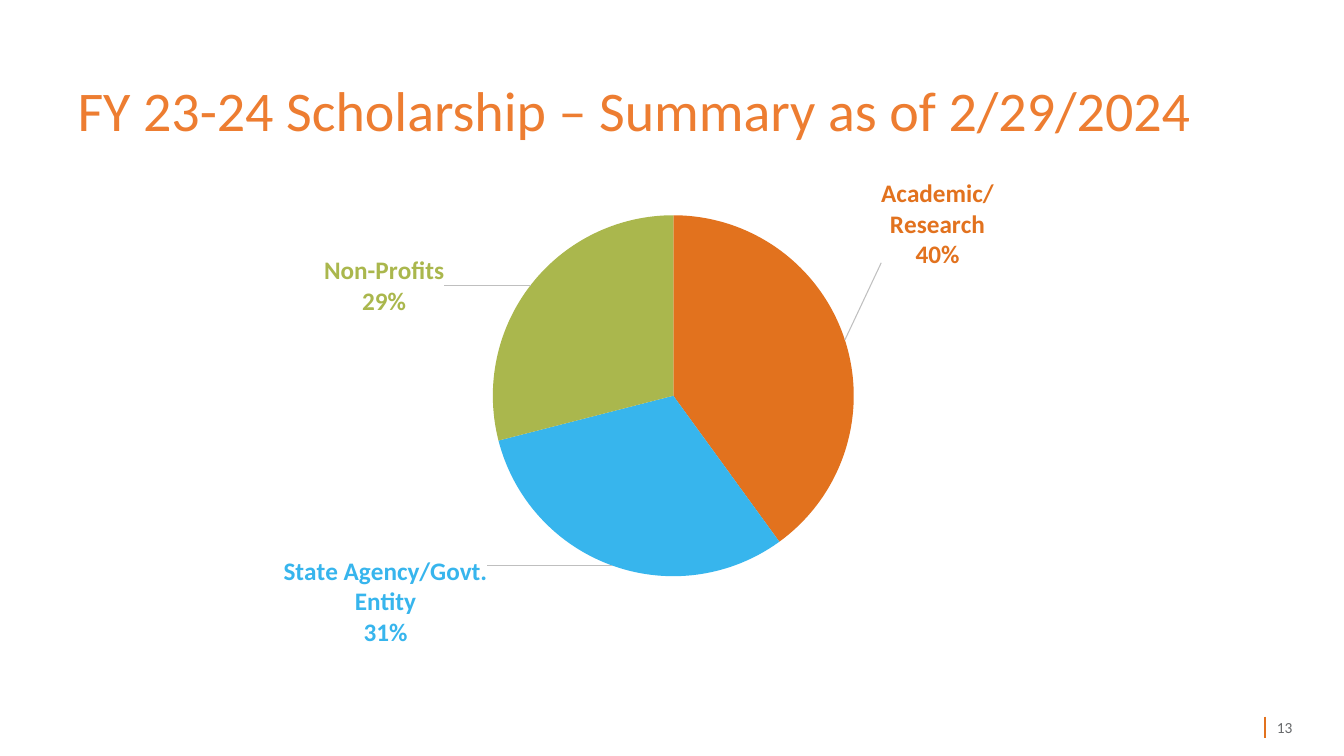
from dataclasses import dataclass

from lxml import etree
from pptx import Presentation, oxml
from pptx import util as u
from pptx.chart import data as chart_data
from pptx.dml import color
from pptx.enum import chart as charts
from pptx.enum import shapes, text
from pptx.oxml import ns


@dataclass(frozen=True)
class Theme:
    font: str = "Calibri"
    title: str = "ED7D31"
    accent: str = "E2721E"
    sky: str = "37B5ED"
    olive: str = "AAB74D"
    number: str = "67696B"
    chart_text: str = "5A5C5E"
    leader: str = "BFBFBF"
    title_size: int = 40
    label_size: int = 18
    number_size: int = 11
    chart_size: int = 10


@dataclass(frozen=True)
class Slice:
    name: str
    percent: int
    fill: str
    # Label offset and label size, as fractions of the chart
    shift: tuple[float, float]
    size: tuple[float, float]


THEME = Theme()
SLICES = [
    Slice("Academic/Research", 40, THEME.accent, (0.03, -0.15), (0.13, 0.19)),
    Slice("State Agency/Govt. Entity", 31, THEME.sky, (-0.12, -0.03), (0.15, 0.25)),
    Slice("Non-Profits", 29, THEME.olive, (-0.08, 0.07), (0.14, 0.13)),
]
CHART_NS = ns.nsdecls("c", "a")
EXT_NS = "http://schemas.microsoft.com/office/drawing/2012/chart"


def rgb(value: str) -> color.RGBColor:
    return color.RGBColor.from_string(value)


def style_font(font, *, size: int, fill: str, bold: bool = False) -> None:
    font.name = THEME.font
    font.size = u.Pt(size)
    font.bold = bold
    font.color.rgb = rgb(fill)


def write_text(box, words: str, *, size: int, fill: str, anchor, spacing: float = 1.0) -> None:
    frame = box.text_frame
    frame.word_wrap = True
    frame.auto_size = text.MSO_AUTO_SIZE.NONE
    frame.vertical_anchor = anchor
    para = frame.paragraphs[0]
    para.alignment = text.PP_ALIGN.LEFT
    para.line_spacing = spacing
    span = para.add_run()
    span.text = words
    style_font(span.font, size=size, fill=fill)


def show_name_and_percent(labels) -> None:
    for flag, value in (("showVal", "0"), ("showCatName", "1"), ("showPercent", "1")):
        labels.find(ns.qn(f"c:{flag}")).set("val", value)
    separator = etree.Element(ns.qn("c:separator"))
    separator.text = "\n"
    labels.find(ns.qn("c:showBubbleSize")).addnext(separator)


def format_slice(point, label, part: Slice) -> None:
    point.format.fill.solid()
    point.format.fill.fore_color.rgb = rgb(part.fill)
    point.format.line.fill.background()
    style_font(point.data_label.font, size=THEME.label_size, fill=part.fill, bold=True)
    point.data_label.position = charts.XL_LABEL_POSITION.OUTSIDE_END
    element = label()
    show_name_and_percent(element)
    x, y = part.shift
    width, height = part.size
    index = element.find(ns.qn("c:idx"))
    index.addnext(oxml.parse_xml(f'<c:numFmt {CHART_NS} formatCode="0%" sourceLinked="0"/>'))
    index.addnext(oxml.parse_xml(
        f'<c:layout {CHART_NS}><c:manualLayout><c:x val="{x}"/><c:y val="{y}"/>'
        "</c:manualLayout></c:layout>"))
    element.append(oxml.parse_xml(
        f'<c:extLst {CHART_NS}><c:ext uri="{{CE6537A1-D6FC-4f65-9D91-7224C49458BB}}" '
        f'xmlns:c15="{EXT_NS}"><c15:layout><c:manualLayout><c:w val="{width}"/>'
        f'<c:h val="{height}"/></c:manualLayout></c15:layout></c:ext></c:extLst>'))


def add_pie(page, parts: list[Slice]) -> None:
    values = chart_data.CategoryChartData()
    values.categories = [part.name for part in parts]
    values.add_series("Series 1", [part.percent for part in parts])
    chart = page.shapes.add_chart(
        charts.XL_CHART_TYPE.PIE, u.Cm(4.22), u.Cm(4.5), u.Cm(25.78), u.Cm(12.67), values).chart
    chart.has_title = False
    chart.has_legend = False
    style_font(chart.font, size=THEME.chart_size, fill=THEME.chart_text)
    plot = chart.plots[0]
    plot.vary_by_categories = True
    series = plot.series[0]

    # Shared label settings and leader lines
    labels = series.data_labels
    style_font(labels.font, size=THEME.label_size, fill=THEME.accent, bold=True)
    labels.number_format = "0%"
    labels.number_format_is_linked = False
    labels.position = charts.XL_LABEL_POSITION.OUTSIDE_END
    group = chart.element.find(f".//{ns.qn('c:ser')}/{ns.qn('c:dLbls')}")
    show_name_and_percent(group)
    for old in group.findall(ns.qn("c:showLeaderLines")):
        group.remove(old)
    group.append(oxml.parse_xml(f'<c:showLeaderLines {CHART_NS} val="1"/>'))
    group.append(oxml.parse_xml(
        f'<c:leaderLines {CHART_NS}><c:spPr><a:ln w="9525"><a:solidFill>'
        f'<a:srgbClr val="{THEME.leader}"/></a:solidFill></a:ln></c:spPr></c:leaderLines>'))

    # Slices with their own labels
    for index, part in enumerate(parts):
        format_slice(series.points[index],
                     lambda: group.findall(ns.qn("c:dLbl"))[index], part)

    # Fixed place of the pie inside the chart
    area = chart.element.find(f".//{ns.qn('c:plotArea')}")
    for old in area.findall(ns.qn("c:layout")):
        area.remove(old)
    place = "".join(f'<c:{key} val="{value}"/>' for key, value in (
        ("layoutTarget", "inner"), ("xMode", "edge"), ("yMode", "edge"),
        ("x", 0.318), ("y", 0.073), ("w", 0.353), ("h", 0.718)))
    area.insert(0, oxml.parse_xml(
        f"<c:layout {CHART_NS}><c:manualLayout>{place}</c:manualLayout></c:layout>"))


def add_page_number(page, number: str) -> None:
    rule = page.shapes.add_connector(
        shapes.MSO_CONNECTOR.STRAIGHT, u.Cm(31.88), u.Cm(18.06), u.Cm(31.88), u.Cm(18.59))
    rule.line.color.rgb = rgb(THEME.accent)
    rule.line.width = u.Pt(1.5)
    etree.SubElement(rule.element.spPr, ns.qn("a:effectLst"))
    box = page.shapes.add_textbox(u.Cm(31.93), u.Cm(17.83), u.Cm(1.12), u.Cm(1.02))
    write_text(box, number, size=THEME.number_size, fill=THEME.number,
               anchor=text.MSO_ANCHOR.MIDDLE)


def main() -> None:
    deck = Presentation()
    deck.slide_width, deck.slide_height = u.Cm(33.87), u.Cm(19.05)
    page = deck.slides.add_slide(deck.slide_layouts[5])

    # Title
    title = page.shapes.title
    title.left, title.top = u.Cm(1.7), u.Cm(1.9)
    title.width, title.height = u.Cm(30.5), u.Cm(1.85)
    write_text(title, "FY 23-24 Scholarship – Summary as of 2/29/2024",
               size=THEME.title_size, fill=THEME.title,
               anchor=text.MSO_ANCHOR.BOTTOM, spacing=0.9)

    # Chart and page number
    add_pie(page, SLICES)
    add_page_number(page, "13")
    deck.save("out.pptx")


if __name__ == "__main__":
    main()
